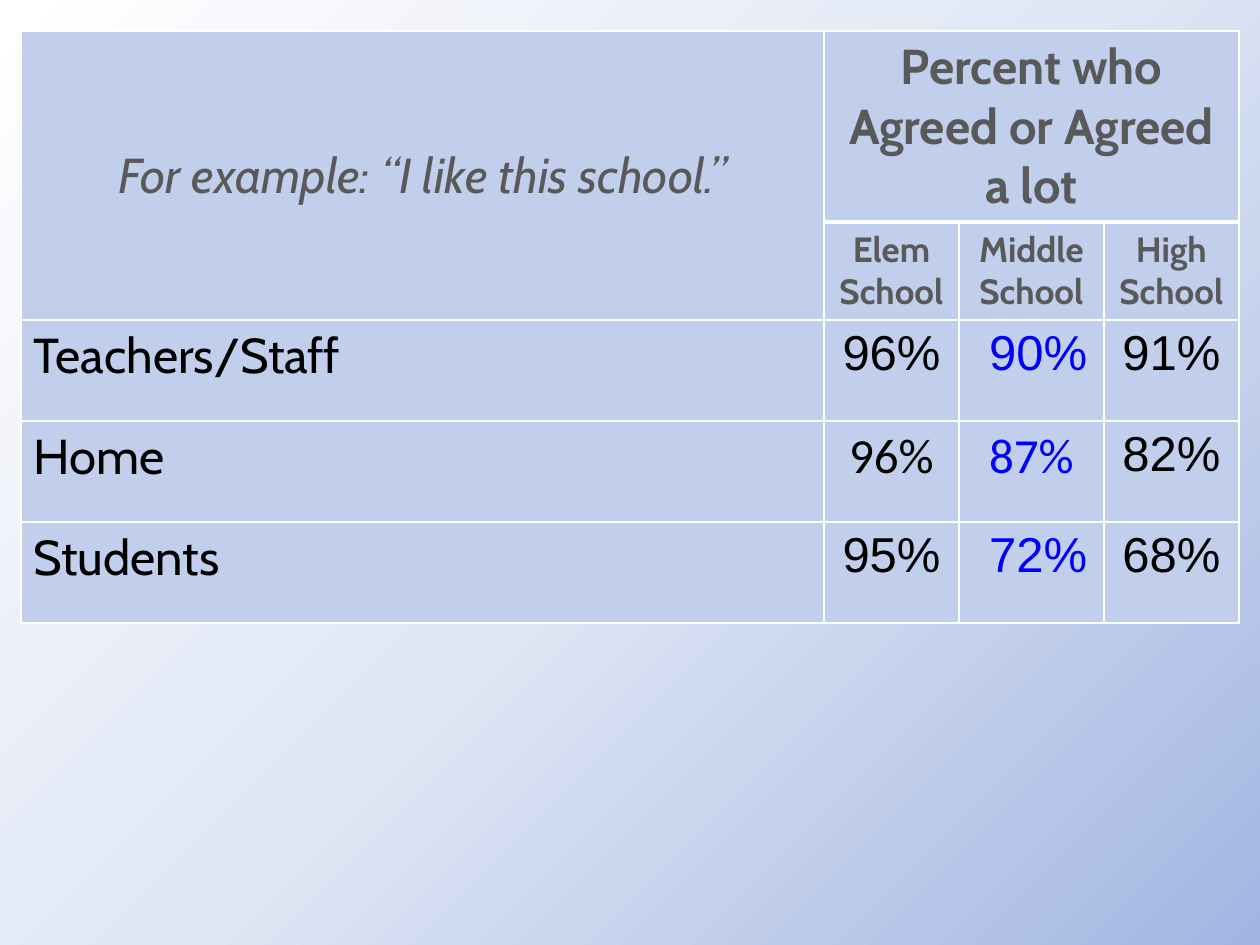
import pptx
import pptx.dml.color
import pptx.enum.text
import pptx.oxml
import pptx.oxml.ns
import pptx.util

PX = 914400 // 126  # one px in EMU
COLORS = {
    "cell": "C1CEEC", "border": "FFFFFF", "heading": "595959",
    "text": "000000", "middle": "0000FF",
}
BACKGROUND_STOPS = [(0, "A3B6E2"), (50, "E0E7F5"), (100, "FFFFFF")]
COLUMNS = [803, 135, 145, 135]
ROWS = [155, 77, 101, 101, 101]
SCHOOLS = ["Elem\nSchool", "Middle School", "High School"]
RESULTS = [
    # group, percentages, fonts of the percentages
    ("Teachers/Staff", ["96%", " 90%", "91%"], ["Arial", "Arial", "Arial"]),
    ("Home", ["96%", "87%", "82%"], ["Calibri", "Calibri", "Arial"]),
    ("Students", ["95%", " 72%", "68%"], ["Arial", "Arial", "Arial"]),
]
NS = pptx.oxml.ns.nsdecls("a")


def set_background(s):
    """Radial gradient that spreads from the bottom right corner."""
    stops = "".join(
        f'<a:gs pos="{pos * 1000}"><a:srgbClr val="{color}"/></a:gs>'
        for pos, color in BACKGROUND_STOPS)
    s.background.fill.gradient()
    old = s.background._cSld.find(".//" + pptx.oxml.ns.qn("a:gradFill"))
    new = pptx.oxml.parse_xml(
        f'<a:gradFill {NS} rotWithShape="1"><a:gsLst>{stops}</a:gsLst>'
        '<a:path path="circle"><a:fillToRect l="100000" t="100000"/></a:path>'
        '</a:gradFill>')
    old.getparent().replace(old, new)


def set_borders(cell, top=1, bottom=1):
    """White cell borders; widths in points."""
    tc_pr = cell._tc.get_or_add_tcPr()
    sides = [("lnL", 1), ("lnR", 1), ("lnT", top), ("lnB", bottom)]
    for i, (side, width) in enumerate(sides):
        tc_pr.insert(i, pptx.oxml.parse_xml(
            f'<a:{side} {NS} w="{pptx.util.Pt(width)}"><a:solidFill>'
            f'<a:srgbClr val="{COLORS["border"]}"/></a:solidFill></a:{side}>'))


def set_text(cell, text, color, size=28, font="Cabin", bold=False,
             italic=False, centered=True):
    tf = cell.text_frame
    tf.text = text
    for p in tf.paragraphs:
        if centered:
            p.alignment = pptx.enum.text.PP_ALIGN.CENTER
        for r in p.runs:
            r.font.name = font
            r.font.size = pptx.util.Pt(size)
            r.font.bold = bold
            r.font.italic = italic
            r.font.color.rgb = pptx.dml.color.RGBColor.from_string(COLORS[color])


def add_results_table(s, x, y, w, h):
    table = s.shapes.add_table(
        len(ROWS), len(COLUMNS), x * PX, y * PX, w * PX, h * PX).table
    table.first_row = False
    table.horz_banding = False
    for column, width in zip(table.columns, COLUMNS):
        column.width = width * PX
    for row, height in zip(table.rows, ROWS):
        row.height = height * PX

    # Fill and borders, with a thick rule under the percent heading
    for i in range(len(ROWS)):
        for j in range(len(COLUMNS)):
            cell = table.cell(i, j)
            cell.fill.solid()
            cell.fill.fore_color.rgb = pptx.dml.color.RGBColor.from_string(
                COLORS["cell"])
            set_borders(cell, top=3 if i == 1 and j else 1,
                        bottom=3 if i == 0 and j else 1)

    # Headings
    statement, percent = table.cell(0, 0), table.cell(0, 1)
    statement.merge(table.cell(1, 0))
    statement.vertical_anchor = pptx.enum.text.MSO_ANCHOR.MIDDLE
    set_text(statement, "For example: “I like this school.”", "heading",
             italic=True)
    percent.merge(table.cell(0, 3))
    set_text(percent, "Percent who Agreed or Agreed a lot", "heading", bold=True)
    for j, school in enumerate(SCHOOLS, 1):
        set_text(table.cell(1, j), school, "heading", size=20, bold=True)

    # Results
    for i, (group, values, fonts) in enumerate(RESULTS, 2):
        set_text(table.cell(i, 0), group, "text", centered=False)
        for j, (value, font) in enumerate(zip(values, fonts), 1):
            set_text(table.cell(i, j), value, "middle" if j == 2 else "text",
                     font=font)


def main():
    prs = pptx.Presentation()
    prs.slide_width = pptx.util.Inches(10)
    prs.slide_height = pptx.util.Inches(7.5)
    s = prs.slides.add_slide(prs.slide_layouts[6])
    set_background(s)
    add_results_table(s, 21, 31, sum(COLUMNS), sum(ROWS))
    prs.save("out.pptx")


if __name__ == "__main__":
    main()
